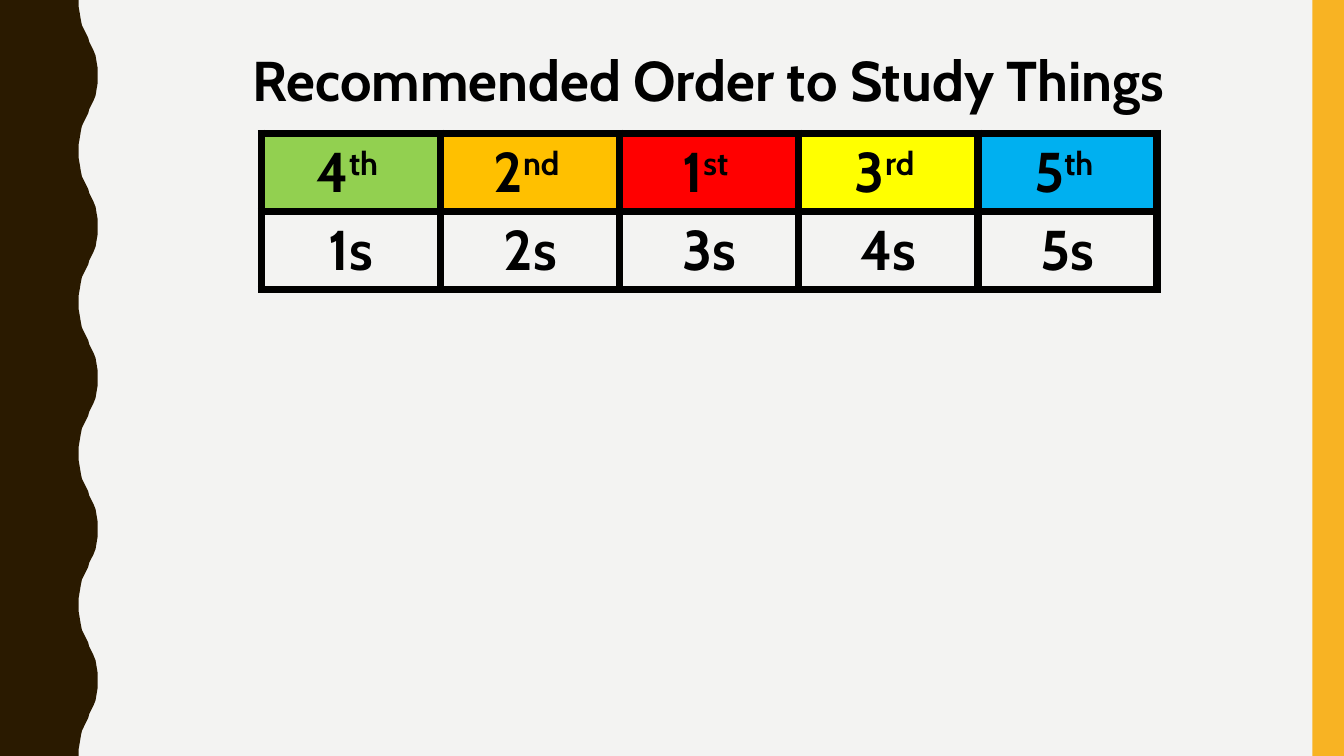
from lxml.etree import SubElement
from pptx import Presentation
from pptx.dml.color import RGBColor
from pptx.enum.shapes import MSO_SHAPE
from pptx.enum.text import MSO_ANCHOR, PP_ALIGN
from pptx.oxml import parse_xml
from pptx.oxml.ns import nsdecls, qn
from pptx.util import Pt

PX = 9525  # EMU per px, 96 px to the inch
SLIDE_WIDTH, SLIDE_HEIGHT = 1280, 720
FONT = "Cabin"

COLORS = {
    "background": "F3F3F2",
    "wave": "2A1A00",
    "stripe": "F8B323",
    "ink": "000000",
    "green": "92D050",
    "orange": "FFC000",
    "red": "FF0000",
    "yellow": "FFFF00",
    "blue": "00B0F0",
}

# Ordinal number, suffix, colour and topic of each column
STUDY_ORDER = [
    ("4", "th ", "green", "1s"),
    ("2", "nd ", "orange", "2s"),
    ("1", "st ", "red", "3s"),
    ("3", "rd ", "yellow", "4s"),
    ("5", "th ", "blue", "5s"),
]

# Half a wave from trough to crest, as (x, y) in px
HALF_WAVE = [
    (75, 0), (75, 7), (76, 13), (77, 19), (78, 24), (80, 28), (82, 32),
    (84, 36), (85, 40), (87, 44), (89, 48), (91, 53), (92, 59), (93, 65), (93, 72),
]
WAVE_PERIOD = 144


def px(*lengths):
    return [length * PX for length in lengths]


def color(name):
    return RGBColor.from_string(COLORS[name])


def paint(shape, fill):
    shape.fill.solid()
    shape.fill.fore_color.rgb = color(fill)
    shape.line.fill.background()
    shape.shadow.inherit = False


def add_text(paragraph, text, size=40, bold=True, ink="ink", baseline=0):
    paragraph.alignment = PP_ALIGN.CENTER
    run = paragraph.add_run()
    run.text = text
    run.font.name = FONT
    run.font.size = Pt(size)
    run.font.bold = bold
    run.font.color.rgb = color(ink)
    if baseline:
        run.font._element.set("baseline", str(baseline * 1000))


def add_wave(slide):
    crest_to_trough = [(x, WAVE_PERIOD - y) for x, y in reversed(HALF_WAVE[:-1])]
    period = HALF_WAVE + crest_to_trough
    edge = [
        px(x, top + y)
        for top in range(0, SLIDE_HEIGHT, WAVE_PERIOD)
        for x, y in period
    ]
    builder = slide.shapes.build_freeform(0, 0)
    builder.add_line_segments(edge + [px(0, SLIDE_HEIGHT)], close=True)
    paint(builder.convert_to_shape(), "wave")


def add_stripe(slide):
    stripe = slide.shapes.add_shape(MSO_SHAPE.RECTANGLE, *px(1250, 0, 30, SLIDE_HEIGHT))
    paint(stripe, "stripe")


def add_title(slide, text):
    title = slide.shapes.title
    title.left, title.top, title.width, title.height = px(186, 39, 978, 74)
    title.text_frame.word_wrap = True
    title.text_frame.vertical_anchor = MSO_ANCHOR.TOP
    add_text(title.text_frame.paragraphs[0], text)


def border_cell(cell, width=6):
    properties = cell._tc.get_or_add_tcPr()
    for index, side in enumerate(("lnL", "lnR", "lnT", "lnB")):
        line = parse_xml(f'<a:{side} {nsdecls("a")} w="{Pt(width)}"/>')
        solid = SubElement(line, qn("a:solidFill"))
        SubElement(solid, qn("a:srgbClr"), val=COLORS["ink"])
        properties.insert(index, line)


def add_study_table(slide):
    frame = slide.shapes.add_table(2, len(STUDY_ORDER), *px(249, 127, 853, 147))
    table = frame.table
    table.first_row = False
    table.horz_banding = False
    for column, (number, suffix, fill, topic) in enumerate(STUDY_ORDER):
        rank_cell, topic_cell = table.cell(0, column), table.cell(1, column)
        rank_cell.fill.solid()
        rank_cell.fill.fore_color.rgb = color(fill)
        topic_cell.fill.background()
        rank = rank_cell.text_frame.paragraphs[0]
        add_text(rank, number)
        add_text(rank, suffix, baseline=30)
        add_text(topic_cell.text_frame.paragraphs[0], topic)
        border_cell(rank_cell)
        border_cell(topic_cell)


def main():
    presentation = Presentation()
    presentation.slide_width, presentation.slide_height = px(SLIDE_WIDTH, SLIDE_HEIGHT)
    slide = presentation.slides.add_slide(presentation.slide_layouts[5])

    # Background and side decoration
    slide.background.fill.solid()
    slide.background.fill.fore_color.rgb = color("background")
    add_wave(slide)
    add_stripe(slide)

    # Content
    add_title(slide, "Recommended Order to Study Things")
    add_study_table(slide)

    presentation.save("out.pptx")


if __name__ == "__main__":
    main()
